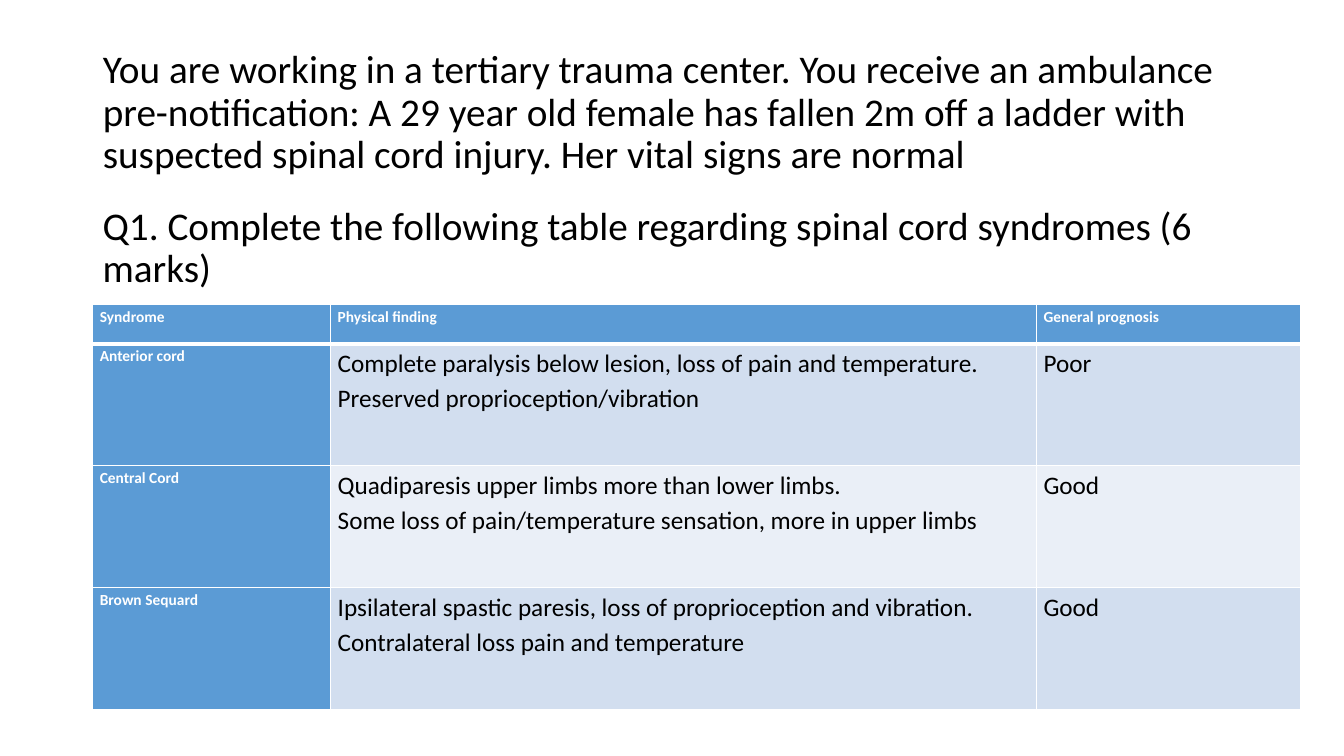
from lxml.etree import SubElement, Element
from pptx import Presentation
from pptx.dml.color import RGBColor as RGB
from pptx.enum.text import MSO_ANCHOR as ANCHOR, MSO_AUTO_SIZE as AUTO, PP_ALIGN as ALIGN
from pptx.oxml.ns import qn
from pptx.util import Inches, Pt

BLACK, WHITE = RGB(0, 0, 0), RGB(255, 255, 255)
BLUE = RGB(0x5B, 0x9B, 0xD5)
BANDS = RGB(0xD2, 0xDE, 0xEF), RGB(0xEA, 0xEF, 0xF7)

LEFT, TEXT_W = 0.92, 11.5
COLS, HEAD_H, ROW_H = (2.36, 7, 2.62), 0.39, 1.21

PROSE = {"name": "Calibri", "size": Pt(28), "bold": False}
LABEL = {"name": "Calibri", "size": Pt(11), "bold": True}
ANSWER = {"name": "Calibri", "size": Pt(18), "bold": False}

SCENARIO = ("You are working in a tertiary trauma center. You receive an ambulance "
            "pre-notification: A 29 year old female has fallen 2m off a ladder with "
            "suspected spinal cord injury. Her vital signs are normal")
QUESTION = "Q1. Complete the following table regarding spinal cord syndromes (6 marks)"
SYNDROMES = [
    ("Syndrome", "Physical finding", "General prognosis"),
    ("Anterior cord",
     "Complete paralysis below lesion, loss of pain and temperature.\n"
     "Preserved proprioception/vibration", "Poor"),
    ("Central Cord",
     "Quadiparesis upper limbs more than lower limbs.\n"
     "Some loss of pain/temperature sensation, more in upper limbs", "Good"),
    ("Brown Sequard",
     "Ipsilateral spastic paresis, loss of proprioception and vibration.\n"
     "Contralateral loss pain and temperature", "Good"),
]


def set_all(obj, values):
    for name, value in values.items():
        setattr(obj, name, value)


def write(tf, text, font, color, **spacing):
    tf.text = text
    for p in tf.paragraphs:
        set_all(p, {"alignment": ALIGN.LEFT, **spacing})
        for r in p.runs:
            set_all(r.font, font)
            r.font.color.rgb = color


def place_text(sp, top, height, text, anchor, before):
    set_all(sp, {"left": Inches(LEFT), "top": Inches(top),
                 "width": Inches(TEXT_W), "height": Inches(height)})
    tf = sp.text_frame
    set_all(tf, {"word_wrap": True, "auto_size": AUTO.NONE, "vertical_anchor": anchor})
    write(tf, text, PROSE, BLACK, line_spacing=0.9, space_before=Pt(before))


def add_borders(cell, bottom):
    tc_pr = cell._tc.get_or_add_tcPr()
    for i, (side, width) in enumerate(zip("LRTB", (1, 1, 1, bottom))):
        ln = Element(qn(f"a:ln{side}"), w=str(Pt(width)))
        SubElement(SubElement(ln, qn("a:solidFill")), qn("a:srgbClr"), val=str(WHITE))
        tc_pr.insert(i, ln)


def format_cell(cell, row, col, text):
    label = row == 0 or col == 0
    set_all(cell, {"margin_left": Inches(0.07), "margin_right": Inches(0.07),
                   "margin_top": 0, "margin_bottom": 0})
    cell.fill.solid()
    cell.fill.fore_color.rgb = BLUE if label else BANDS[(row - 1) % 2]
    write(cell.text_frame, text, LABEL if label else ANSWER,
          WHITE if label else BLACK, line_spacing=1.15)
    add_borders(cell, 3 if row == 0 else 1)


def add_syndrome_table(slide, top):
    heights = [HEAD_H] + [ROW_H] * (len(SYNDROMES) - 1)
    table = slide.shapes.add_table(len(heights), len(COLS), Inches(LEFT), Inches(top),
                                   Inches(sum(COLS)), Inches(sum(heights))).table
    table.first_col = True
    for col, width in zip(table.columns, COLS):
        col.width = Inches(width)
    for i, (height, texts) in enumerate(zip(heights, SYNDROMES)):
        table.rows[i].height = Inches(height)
        for j, text in enumerate(texts):
            format_cell(table.cell(i, j), i, j, text)


def main():
    prs = Presentation()
    set_all(prs, {"slide_width": Inches(13.33), "slide_height": Inches(7.5)})
    slide = prs.slides.add_slide(prs.slide_layouts.get_by_name("Title Only"))
    place_text(slide.shapes.title, 0.4, 1.45, SCENARIO, ANCHOR.MIDDLE, 0)
    place_text(slide.shapes.add_textbox(0, 0, 0, 0), 2, 1, QUESTION, ANCHOR.TOP, 10)
    add_syndrome_table(slide, 3.02)
    prs.save("out.pptx")


if __name__ == "__main__":
    main()
